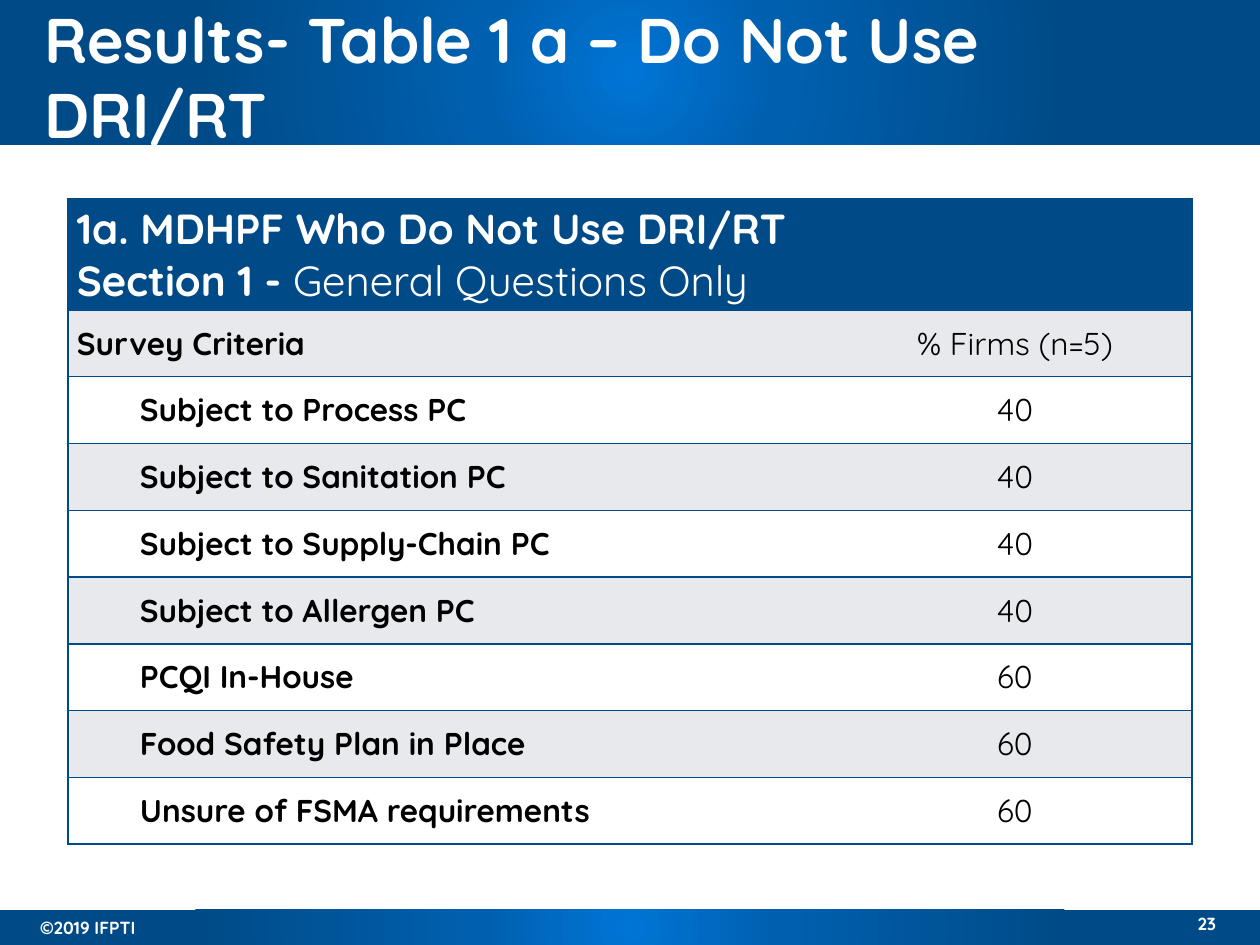
from lxml import etree
from pptx import Presentation
from pptx.dml.color import RGBColor
from pptx.enum.shapes import MSO_SHAPE
from pptx.enum.text import MSO_ANCHOR, MSO_AUTO_SIZE, PP_ALIGN
from pptx.oxml import parse_xml
from pptx.oxml.ns import nsdecls, qn
from pptx.util import Inches, Pt

TITLE = "Results- Table 1 a – Do Not Use DRI/RT"
HEADING = [
    [("1a. MDHPF Who Do Not Use DRI/RT", True)],
    [("Section 1 - ", True), ("General Questions Only\u00a0", False)],
]
ROWS = [
    ("Survey Criteria", "% Firms (n=5)"),
    ("Subject to Process PC", "40"),
    ("Subject to Sanitation PC", "40"),
    ("Subject to Supply-Chain PC", "40"),
    ("Subject to Allergen PC", "40"),
    ("PCQI In-House", "60"),
    ("Food Safety Plan in Place", "60"),
    ("Unsure of FSMA requirements", "60"),
]
FOOTERS = [
    ("©2019 IFPTI", (0.22, 7.23, 1.33, 0.27), PP_ALIGN.LEFT),
    ("23", (8.79, 7.2, 0.96, 0.27), PP_ALIGN.RIGHT),
]
BANDS = [(0, 0, 10, 1.15), (0, 7.22, 10, 0.28)]
COLORS = {"navy": "004B87", "white": "FFFFFF", "black": "000000", "grey": "E7E9ED"}
STOPS = [(0, "0075D6"), (23, "0060B0"), (69, "004B87"), (97, "004B87")]
COL_WIDTHS = [6.11, 2.81]
HEAD_H, ROW_H = 0.88, 0.53


def rgb(name):
    return RGBColor.from_string(COLORS[name])


def add_run(p, text, size, color, bold):
    r = p.add_run()
    r.text = text
    for key, value in {"name": "Quicksand", "size": Pt(size), "bold": bold}.items():
        setattr(r.font, key, value)
    r.font.color.rgb = rgb(color)


def add_band(s, box):
    sp = s.shapes.add_shape(MSO_SHAPE.RECTANGLE, *map(Inches, box))
    sp.shadow.inherit = False
    sp.line.fill.background()
    stops = "".join(
        f'<a:gs pos="{pos * 1000}"><a:srgbClr val="{color}"/></a:gs>' for pos, color in STOPS
    )
    grad = parse_xml(
        f'<a:gradFill {nsdecls("a")} rotWithShape="1"><a:gsLst>{stops}</a:gsLst>'
        '<a:path path="circle"><a:fillToRect l="50000" t="50000" r="50000" b="50000"/>'
        "</a:path></a:gradFill>"
    )
    sp._element.spPr.find(qn("a:prstGeom")).addnext(grad)


def format_cell(cell, fill, sides):
    tcPr = cell._tc.get_or_add_tcPr()
    for side in "LRTB":
        ln = etree.SubElement(tcPr, qn(f"a:ln{side}"), w=str(Pt(1)))
        if side in sides:
            solid = etree.SubElement(ln, qn("a:solidFill"))
            etree.SubElement(solid, qn("a:srgbClr"), val=COLORS["navy"])
        else:
            etree.SubElement(ln, qn("a:noFill"))
    cell.fill.solid()
    cell.fill.fore_color.rgb = rgb(fill)
    layout = {
        "margin_left": Inches(0.07),
        "margin_right": Inches(0.07),
        "margin_top": 0,
        "margin_bottom": 0,
        "vertical_anchor": MSO_ANCHOR.MIDDLE,
    }
    for key, value in layout.items():
        setattr(cell, key, value)


def add_results_table(s):
    height = HEAD_H + ROW_H * len(ROWS)
    box = (0.54, 1.58, sum(COL_WIDTHS), height)
    table = s.shapes.add_table(len(ROWS) + 1, 2, *map(Inches, box)).table
    for col, width in zip(table.columns, COL_WIDTHS):
        col.width = Inches(width)
    for i, row in enumerate(table.rows):
        row.height = Inches(ROW_H if i else HEAD_H)

    head = table.cell(0, 0)
    head.merge(table.cell(0, 1))
    for c in range(2):
        format_cell(table.cell(0, c), "navy", "LRTB")
    tf = head.text_frame
    for i, runs in enumerate(HEADING):
        p = tf.add_paragraph() if i else tf.paragraphs[0]
        for text, bold in runs:
            add_run(p, text, 24, "white", bold)

    for i, texts in enumerate(ROWS):
        for c, text in enumerate(texts):
            cell = table.cell(i + 1, c)
            format_cell(cell, "white" if i % 2 else "grey", "RTB" if c else "LTB")
            p = cell.text_frame.paragraphs[0]
            if c:
                p.alignment = PP_ALIGN.CENTER
            elif i:
                pPr = p._p.get_or_add_pPr()
                pPr.set("marL", "0")
                pPr.set("indent", str(Inches(0.5)))
            add_run(p, text, 18, "black", c == 0)


def add_title(s):
    title = s.shapes.title
    box = (0.25, 0.13, 9.32, 0.94)
    for key, value in zip(("left", "top", "width", "height"), box):
        setattr(title, key, Inches(value))
    tf = title.text_frame
    tf.auto_size = MSO_AUTO_SIZE.NONE
    tf.vertical_anchor = MSO_ANCHOR.MIDDLE
    p = tf.paragraphs[0]
    p.alignment = PP_ALIGN.LEFT
    add_run(p, TITLE, 36, "white", True)
    s.shapes._spTree.append(title._element)


def main():
    prs = Presentation()
    prs.slide_width, prs.slide_height = Inches(10), Inches(7.5)
    s = prs.slides.add_slide(prs.slide_layouts[5])
    for box in BANDS:
        add_band(s, box)
    for text, box, align in FOOTERS:
        tf = s.shapes.add_textbox(*map(Inches, box)).text_frame
        tf.word_wrap = True
        p = tf.paragraphs[0]
        p.alignment = align
        add_run(p, text, 10, "white", True)
    add_title(s)
    add_results_table(s)
    prs.save("out.pptx")


if __name__ == "__main__":
    main()
